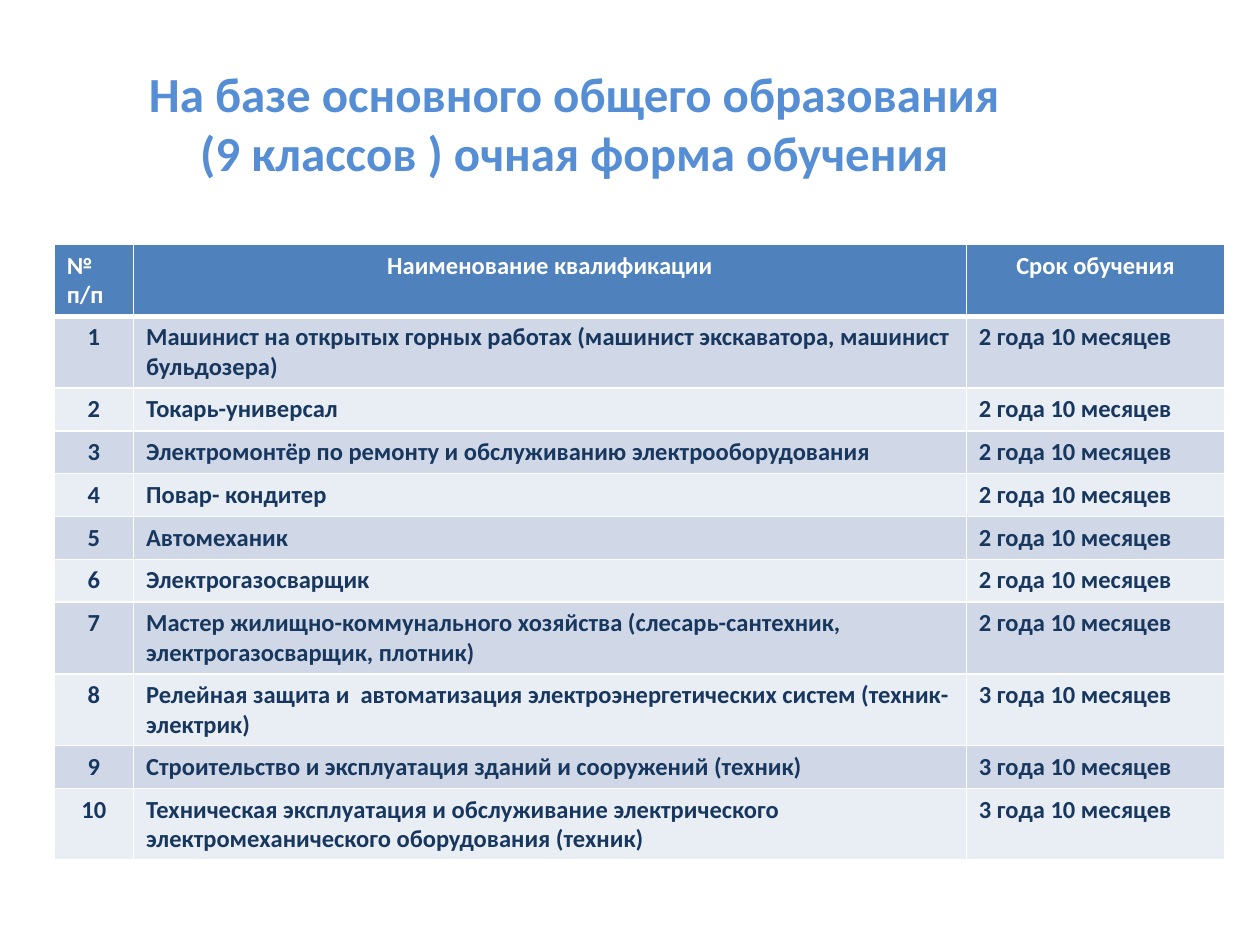
import pptx
import pptx.dml.color
import pptx.enum.text
import pptx.oxml.ns
import pptx.util
from pptx.util import Inches
import lxml.etree

CENTER = pptx.enum.text.PP_ALIGN.CENTER
LEFT = pptx.enum.text.PP_ALIGN.LEFT


def color(value):
    return pptx.dml.color.RGBColor.from_string(value)


def write(text_frame, text, size, text_color, alignment):
    """Put bold Calibri text into a frame, one paragraph with line breaks."""
    paragraph = text_frame.paragraphs[0]
    paragraph.text = text
    paragraph.alignment = alignment
    font_format = {"name": "Calibri", "size": pptx.util.Pt(size), "bold": True}
    for run in paragraph.runs:
        for attribute, value in font_format.items():
            setattr(run.font, attribute, value)
        run.font.color.rgb = color(text_color)


presentation = pptx.Presentation()
presentation.slide_width = Inches(10)
presentation.slide_height = Inches(7.5)
slide = presentation.slides.add_slide(presentation.slide_layouts[6])

# Title: the deep bottom inset lifts the two lines
title = slide.shapes.add_textbox(Inches(0.35), Inches(0.76), Inches(8.5), Inches(0.87))
title_format = {
    "word_wrap": True,
    "vertical_anchor": pptx.enum.text.MSO_ANCHOR.MIDDLE,
    "margin_bottom": Inches(0.5),
}
for attribute, value in title_format.items():
    setattr(title.text_frame, attribute, value)
write(title.text_frame,
      "На базе основного общего образования \v(9 классов ) очная форма обучения ",
      28, "558ED5", CENTER)

# Table content: qualification and years of study
qualifications = [
    ("Машинист на открытых горных работах (машинист экскаватора, машинист бульдозера)", 2),
    ("Токарь-универсал", 2),
    ("Электромонтёр по ремонту и обслуживанию электрооборудования", 2),
    ("Повар- кондитер", 2),
    ("Автомеханик", 2),
    ("Электрогазосварщик", 2),
    ("Мастер жилищно-коммунального хозяйства (слесарь-сантехник, электрогазосварщик, плотник)", 2),
    ("Релейная защита и  автоматизация электроэнергетических систем (техник-электрик)", 3),
    ("Строительство и эксплуатация зданий и сооружений (техник)", 3),
    ("Техническая эксплуатация и обслуживание электрического "
     "электромеханического оборудования (техник)", 3),
]
rows = [("№ п/п", "Наименование квалификации", "Срок обучения")]
for number, (name, years) in enumerate(qualifications, start=1):
    rows.append((str(number), name, f"{years} года 10 месяцев"))

# Table grid: long names take two lines
column_widths = [0.63, 6.61, 2.05]
row_heights = [0.57 if index == 0 or len(row[1]) > 65 else 0.34
               for index, row in enumerate(rows)]
table = slide.shapes.add_table(
    len(rows), len(column_widths), Inches(0.43), Inches(1.94),
    Inches(sum(column_widths)), Inches(sum(row_heights))).table
for column, width in zip(table.columns, column_widths):
    column.width = Inches(width)
for row, height in zip(table.rows, row_heights):
    row.height = Inches(height)

# Cells: header, then alternating bands, with white borders
for row_index, row in enumerate(rows):
    is_header = row_index == 0
    fill_color = "4F81BD" if is_header else ("E9EDF4", "D0D8E8")[row_index % 2]
    text_color = "FFFFFF" if is_header else "17375E"
    border_widths = {
        "a:lnL": 1,
        "a:lnR": 1,
        "a:lnT": 3 if row_index == 1 else 1,
        "a:lnB": 3 if is_header else 1,
    }
    for column_index, text in enumerate(row):
        cell = table.cell(row_index, column_index)
        centered = (column_index > 0) if is_header else (column_index == 0)
        write(cell.text_frame, text, 14, text_color, CENTER if centered else LEFT)
        properties = cell._tc.get_or_add_tcPr()
        for tag, width in border_widths.items():
            line = lxml.etree.SubElement(properties, pptx.oxml.ns.qn(tag),
                                         w=str(pptx.util.Pt(width)))
            line_fill = lxml.etree.SubElement(line, pptx.oxml.ns.qn("a:solidFill"))
            lxml.etree.SubElement(line_fill, pptx.oxml.ns.qn("a:srgbClr"), val="FFFFFF")
        cell.fill.solid()
        cell.fill.fore_color.rgb = color(fill_color)

presentation.save("out.pptx")
